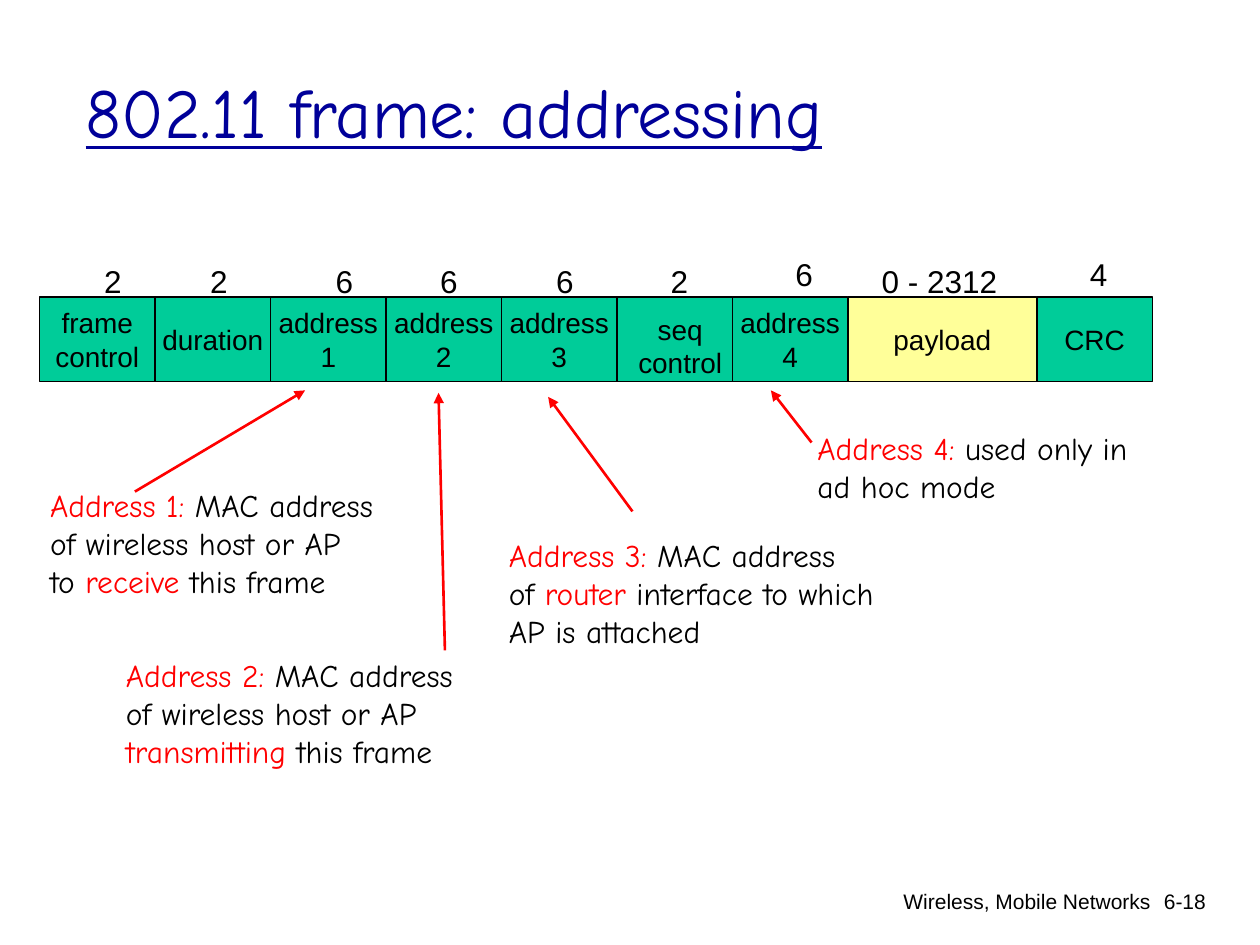
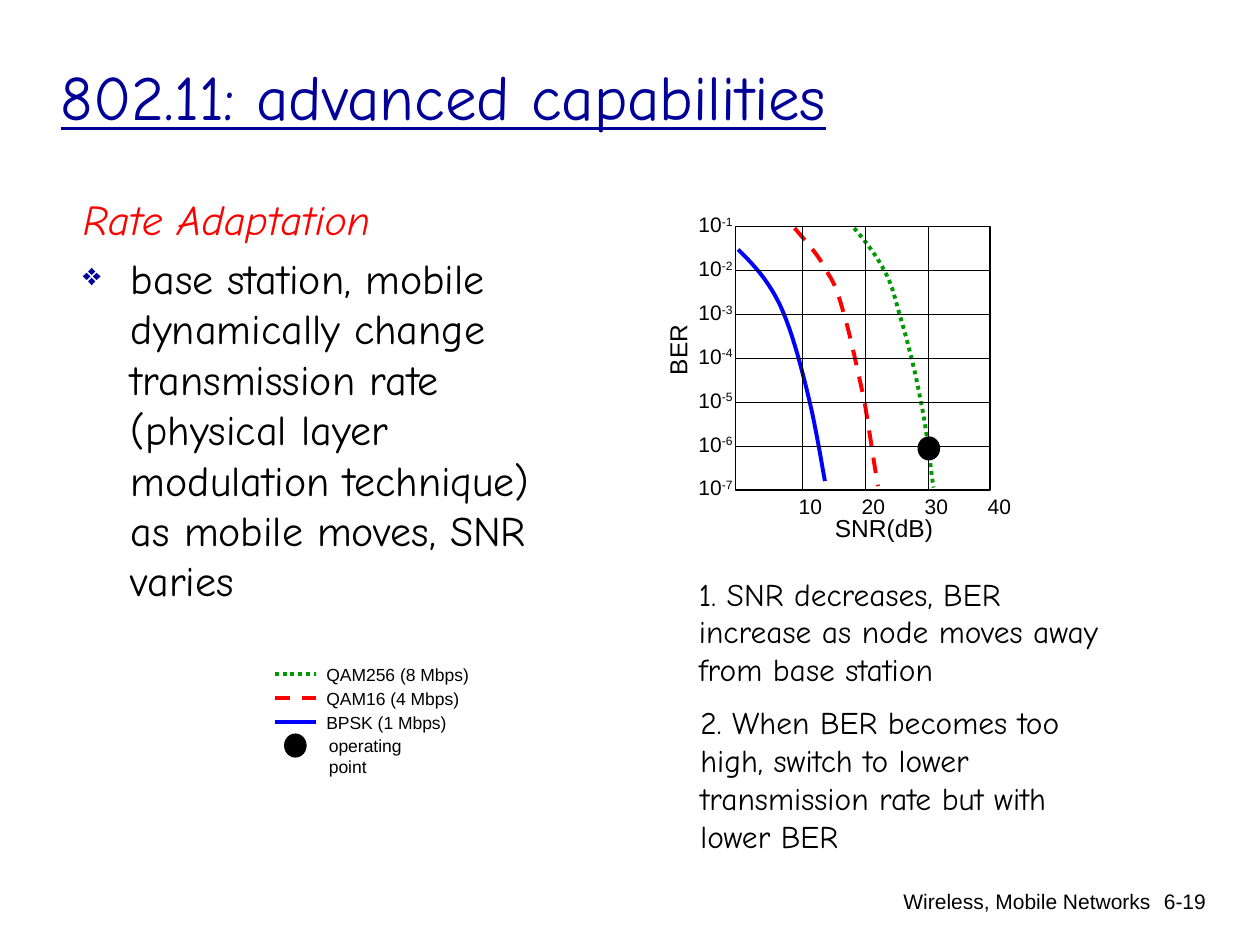
from lxml.etree import SubElement
from pptx import Presentation
from pptx.dml.color import RGBColor
from pptx.enum.dml import MSO_LINE
from pptx.enum.shapes import MSO_CONNECTOR, MSO_SHAPE
from pptx.enum.text import MSO_ANCHOR, MSO_AUTO_SIZE, PP_ALIGN
from pptx.oxml.ns import qn
from pptx.util import Cm, Pt

# Shared look
BLACK, RED, NAVY = "000000", "FF0000", "000099"
BLUE, GREEN = "0000FF", "009900"
FIELD_GREEN, PAYLOAD_YELLOW = "00CC99", "FFFF99"
PLAIN_FONT, HAND_FONT = "Arial", "Comic Neue"
CHAPTER = "Wireless, Mobile Networks"

# Modulation schemes: legend label, colour, dash
SCHEMES = {
    "QAM256": ("QAM256 (8 Mbps)", GREEN, MSO_LINE.ROUND_DOT),
    "QAM16": ("QAM16 (4 Mbps)", RED, MSO_LINE.DASH),
    "BPSK": ("BPSK (1 Mbps)", BLUE, None),
}

# Bezier points of each error curve, in cm from the corner of the graph
CURVES = {
    "BPSK": [(0.05, 0.46), (0.36, 0.76), (0.66, 1.09), (0.89, 1.57), (1.12, 2.06),
             (1.3, 2.74), (1.45, 3.35), (1.6, 3.94), (1.75, 4.85), (1.8, 5.13)],
    "QAM16": [(1.19, 0.03), (1.42, 0.3), (1.68, 0.58), (1.83, 0.89), (2.01, 1.17),
              (2.06, 1.32), (2.18, 1.75), (2.31, 2.18), (2.46, 2.9), (2.59, 3.48),
              (2.69, 4.06), (2.77, 4.65), (2.87, 5.23)],
    "QAM256": [(2.39, 0.03), (2.62, 0.3), (2.84, 0.58), (3, 0.89), (3.15, 1.17),
               (3.18, 1.32), (3.3, 1.75), (3.43, 2.18), (3.63, 2.92), (3.73, 3.51),
               (3.86, 4.09), (3.94, 4.98), (3.99, 5.26)],
}

# Frame fields: label lines, length in bytes, offset of the length label
FIELDS = [
    (["frame", "control"], "2", (1.05, -0.84)),
    (["duration"], "2", (0.86, -0.84)),
    (["address", "1"], "6", (1.06, -0.84)),
    (["address", "2"], "6", (0.84, -0.84)),
    (["address", "3"], "6", (0.85, -0.84)),
    (["seq", "control"], "2", (0.83, -0.84)),
    (["address", "4"], "6", (1.02, -0.97)),
    (["payload"], "0 - 2312", (0.43, -0.84)),
    (["CRC"], "4", (0.82, -0.97)),
]


def rgb(color):
    return RGBColor.from_string(color)


def write_text(text_frame, paragraphs, size=18, font=HAND_FONT, color=BLACK,
               align=PP_ALIGN.LEFT, anchor=MSO_ANCHOR.TOP, wrap=True,
               underline=False, fit=False):
    """Each paragraph is a string or a list of (text, run options)."""
    text_frame.word_wrap = wrap
    text_frame.vertical_anchor = anchor
    text_frame.auto_size = MSO_AUTO_SIZE.SHAPE_TO_FIT_TEXT if fit else MSO_AUTO_SIZE.NONE
    for index, content in enumerate(paragraphs):
        paragraph = text_frame.add_paragraph() if index else text_frame.paragraphs[0]
        paragraph.alignment = align
        for text, options in [(content, {})] if isinstance(content, str) else content:
            run = paragraph.add_run()
            run.text = text
            run.font.size = Pt(size)
            run.font.name = font
            run.font.color.rgb = rgb(options.get("color", color))
            run.font.underline = underline or None
            run.font.italic = options.get("italic")
            if options.get("raised"):
                run.font._element.set("baseline", "30000")


def add_text(slide, box, paragraphs, **text_format):
    text_box = slide.shapes.add_textbox(*map(Cm, box))
    write_text(text_box.text_frame, paragraphs, **text_format)
    return text_box


def add_label(slide, box, text, size=12, **text_format):
    """A short one-line label in the plain font."""
    return add_text(slide, box, [text], size=size, font=PLAIN_FONT,
                    wrap=False, fit=True, **text_format)


def style_line(line, color=BLACK, width=0.75, dash=None):
    line.color.rgb = rgb(color)
    line.width = Pt(width)
    if dash:
        line.dash_style = dash


def add_line(slide, start, end, arrow=False, **line_format):
    connector = slide.shapes.add_connector(
        MSO_CONNECTOR.STRAIGHT, *map(Cm, (*start, *end)))
    style_line(connector.line, **line_format)
    if arrow:
        SubElement(connector.line._get_or_add_ln(), qn("a:tailEnd"), type="triangle")
    SubElement(connector._element.spPr, qn("a:effectLst"))


def add_block(slide, kind, box, fill=None):
    shape = slide.shapes.add_shape(kind, *map(Cm, box))
    shape.shadow.inherit = False
    if fill:
        shape.fill.solid()
        shape.fill.fore_color.rgb = rgb(fill)
    else:
        shape.fill.background()
    style_line(shape.line)
    return shape


def add_titled_slide(presentation, title, box, size, number):
    slide = presentation.slides.add_slide(presentation.slide_layouts[5])
    placeholder = slide.shapes.title
    placeholder.left, placeholder.top, placeholder.width, placeholder.height = map(Cm, box)
    write_text(placeholder.text_frame, [title], size=size, color=NAVY,
               anchor=MSO_ANCHOR.MIDDLE, underline=True)
    # Footer
    for footer_box, text in [((12.73, 17.78, 10.72, 0.89), CHAPTER),
                             ((22.68, 17.78, 1.88, 1.27), number)]:
        add_text(slide, footer_box, [text], size=12, font=PLAIN_FONT,
                 align=PP_ALIGN.RIGHT)
    return slide


def add_frame_fields(slide, box):
    left, top, width, height = box
    payload_width = 3.81
    field_width = (width - payload_width) / (len(FIELDS) - 1)
    label_format = dict(size=16, font=PLAIN_FONT, align=PP_ALIGN.CENTER, wrap=False)
    for lines, length, (shift_x, shift_y) in FIELDS:
        is_payload = lines == ["payload"]
        block_width = payload_width if is_payload else field_width
        block = add_block(slide, MSO_SHAPE.RECTANGLE, (left, top, block_width, height),
                          PAYLOAD_YELLOW if is_payload else FIELD_GREEN)
        if lines[0] == "seq":
            # This label sits a little right of and below the centre
            add_text(slide, (left + 0.17, top + 0.18, 2.21, 1.63), lines,
                     fit=True, **label_format)
        else:
            write_text(block.text_frame, lines, anchor=MSO_ANCHOR.MIDDLE, **label_format)
        add_label(slide, (left + shift_x, top + shift_y, 2.84 if is_payload else 0.86, 1.02),
                  length, size=18)
        left += block_width


def add_address_note(slide, box, paragraphs, arrow_start, arrow_end):
    """Arrow ends are measured from the corner of the note."""
    left, top = box[:2]
    add_text(slide, box, paragraphs, fit=True)
    start, end = [(left + x, top + y) for x, y in (arrow_start, arrow_end)]
    add_line(slide, start, end, arrow=True, color=RED, width=1.5)


def add_rate_text(slide, box):
    text_box = add_text(slide, box, [
        [("Rate Adaptation", {"color": RED, "italic": True})],
        "base station, mobile dynamically change transmission rate (physical layer "
        "modulation technique) as mobile moves, SNR varies",
    ], size=24)
    bullet = text_box.text_frame.paragraphs[1]
    properties = bullet._p.get_or_add_pPr()
    properties.set("marL", str(Cm(0.97)))
    properties.set("indent", str(-Cm(0.97)))
    bullet_color = SubElement(properties, qn("a:buClr"))
    SubElement(bullet_color, qn("a:srgbClr"), val=NAVY)
    SubElement(properties, qn("a:buSzPct"), val="75000")
    SubElement(properties, qn("a:buChar"), char="❖")
    bullet.space_before = Pt(4.8)


def add_operating_point(slide, left, top):
    add_block(slide, MSO_SHAPE.OVAL, (left, top, 0.43, 0.46), BLACK)


def add_legend(slide, box):
    left, top, width, height = box
    row_height = height / 4
    for row, (text, color, dash) in enumerate(SCHEMES.values()):
        row_top = top + row * row_height
        add_line(slide, (left, row_top + 0.33), (left + 0.84, row_top + 0.33),
                 color=color, width=2.25, dash=dash)
        add_label(slide, (left + 0.79, row_top, width - 0.79, 0.69), text, size=10)
    row_top = top + 3 * row_height
    add_operating_point(slide, left + 0.2, row_top + 0.1)
    add_label(slide, (left + 0.84, row_top, 2.82, 0.69), "operating point", size=10)


def bezier_points(points, steps=10):
    """Points along a chain of cubic curves that share their ends."""
    result = [points[0]]
    for first in range(0, len(points) - 1, 3):
        segment = points[first:first + 4]
        for step in range(1, steps + 1):
            t = step / steps
            weights = ((1 - t) ** 3, 3 * t * (1 - t) ** 2, 3 * t * t * (1 - t), t ** 3)
            result.append(tuple(sum(weight * point[axis]
                                    for weight, point in zip(weights, segment))
                                for axis in (0, 1)))
    return result


def add_error_graph(slide, box):
    left, top, width, height = box
    # Curves
    for scheme, points in CURVES.items():
        color, dash = SCHEMES[scheme][1:]
        start, *rest = [(Cm(left + x), Cm(top + y)) for x, y in bezier_points(points)]
        builder = slide.shapes.build_freeform(*start)
        builder.add_line_segments(rest, close=False)
        curve = builder.convert_to_shape()
        curve.shadow.inherit = False
        curve.fill.background()
        style_line(curve.line, color, 2.25, dash)
    # Frame and grid
    add_block(slide, MSO_SHAPE.RECTANGLE, box)
    row_height, column_width = height / 6, 1.27
    for row in range(1, 6):
        y = top + row * row_height
        add_line(slide, (left, y), (left + width, y))
    for column in range(3):
        x = left + 1.35 + column * column_width
        add_line(slide, (x, top), (x, top + height))
    # Axis labels
    for column in range(4):
        add_label(slide, (left + 1.02 + column * column_width, top + 5.26, 0.99, 0.76),
                  str(10 * (column + 1)))
    for row in range(7):
        add_label(slide, (left - 1, top - 0.43 + row * row_height, 1.22, 0.76),
                  [("10", {}), (f"-{row + 1}", {"raised": True})])
    add_label(slide, (left + 1.75, top + 5.64, 2.49, 0.84), "SNR(dB)", size=14)
    add_label(slide, (left - 1.93, top + 2.06, 1.52, 0.84), "BER", size=14).rotation = 270
    add_operating_point(slide, left + 3.68, top + 4.24)


def build_addressing_slide(presentation):
    slide = add_titled_slide(presentation, "802.11 frame: addressing",
                             (1.47, 0.64, 21.59, 3.18), 40, "6-18")
    add_frame_fields(slide, (0.8, 5.99, 22.43, 1.7))
    red = {"color": RED}
    add_address_note(slide, (0.76, 9.68, 7.8, 2.54), [
        [("Address 1:", red), (" MAC address", {})],
        "of wireless host or AP",
        [("to ", {}), ("receive", red), (" this frame", {})],
    ], (1.96, 0.23), (5.39, -1.81))
    add_address_note(slide, (2.29, 13.11, 7.9, 2.54), [
        [("Address 2:", red), (" MAC address", {})],
        "of wireless host or AP",
        [("transmitting", red), (" this frame", {})],
    ], (6.68, 0), (6.55, -5.19))
    add_address_note(slide, (10.01, 10.69, 8.48, 2.54), [
        [("Address 3:", red), (" MAC address", {})],
        [("of ", {}), ("router", red), (" interface to which AP is attached", {})],
    ], (2.74, -0.38), (1.04, -2.69))
    add_address_note(slide, (16.23, 8.53, 7.24, 1.78), [
        [("Address 4:", red), (" used only in ad hoc mode", {})],
    ], (0.13, 0.39), (-0.69, -0.66))


def build_capabilities_slide(presentation):
    slide = add_titled_slide(presentation, "802.11: advanced capabilities",
                             (0.97, 0.76, 21.59, 2.34), 36, "6-19")
    add_rate_text(slide, (1.42, 3.78, 10.41, 12.9))
    add_legend(slide, (5.54, 13.26, 4.17, 1.92))
    add_error_graph(slide, (14.83, 4.57, 5.13, 5.31))
    add_text(slide, (13.84, 11.46, 8.89, 2.54),
             ["1. SNR decreases, BER increase as node moves away from base station"], fit=True)
    add_text(slide, (13.87, 14.05, 8.89, 3.3),
             ["2. When BER becomes too high, switch to lower transmission rate "
              "but with lower BER"], fit=True)


def main():
    presentation = Presentation()
    presentation.slide_width, presentation.slide_height = Cm(25.4), Cm(19.05)
    build_addressing_slide(presentation)
    build_capabilities_slide(presentation)
    presentation.save("out.pptx")


if __name__ == "__main__":
    main()
